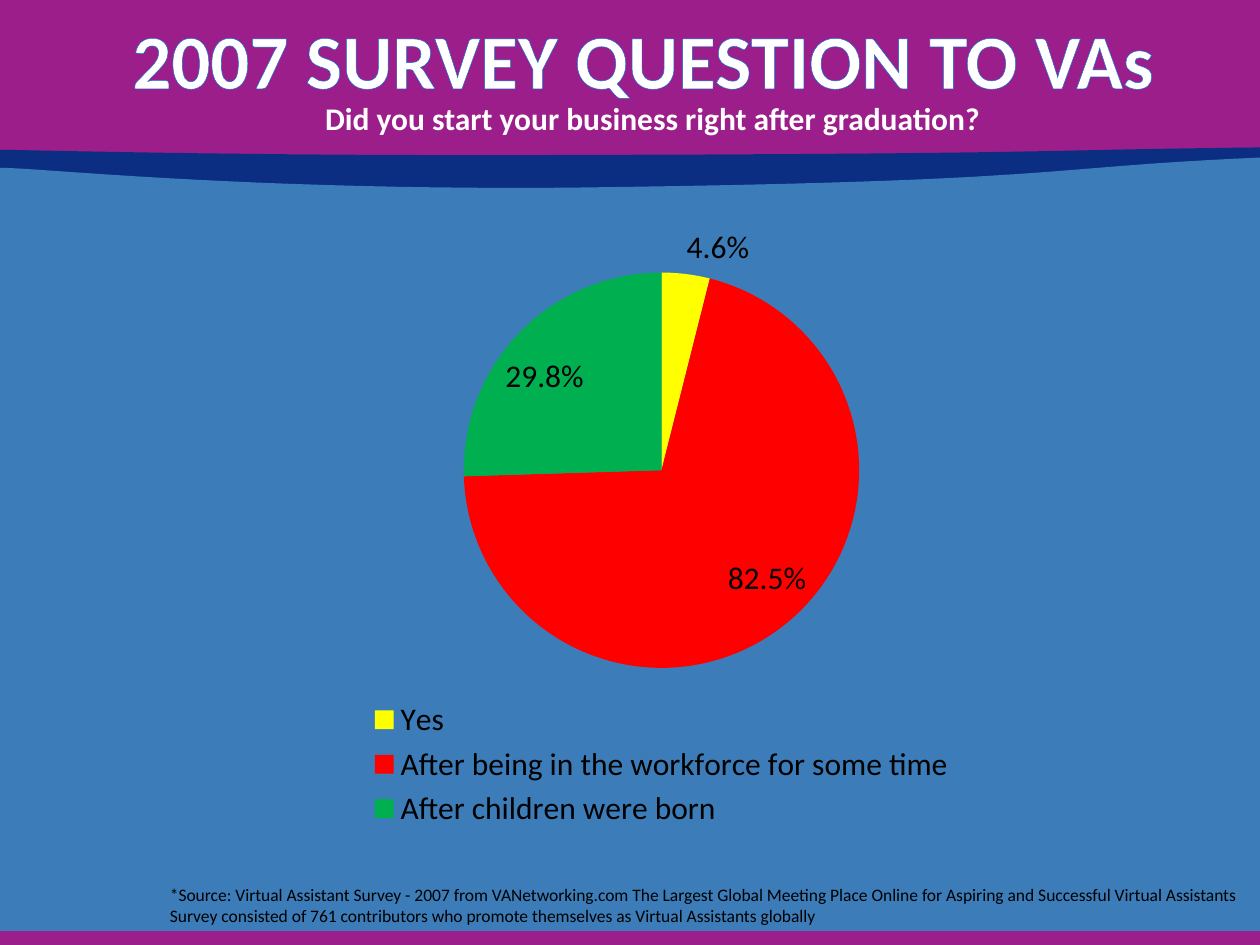
from dataclasses import dataclass, field
from lxml.etree import SubElement
from pptx import Presentation
from pptx.chart.data import CategoryChartData
from pptx.dml.color import RGBColor
from pptx.enum.chart import XL_CHART_TYPE, XL_LABEL_POSITION, XL_LEGEND_POSITION
from pptx.enum.shapes import MSO_SHAPE
from pptx.enum.text import MSO_ANCHOR, PP_ALIGN
from pptx.oxml.ns import qn
from pptx.util import Inches, Pt

WIDTH, HEIGHT = Inches(10), Inches(7.5)
COLS, ROWS = 100, 75
PURPLE, NAVY, BLUE = "9C1E8A", "0B2E82", "3C7DB9"
WHITE, BLACK, EDGE = "FFFFFF", "000000", "0070D5"
LEFT, STEPS = -0.3, 24


@dataclass
class Box:
    x: float
    y: float
    w: float
    h: float

    def place(self) -> tuple[int, ...]:
        return across(self.x), down(self.y), across(self.w), down(self.h)


@dataclass
class Wave:
    start: tuple[float, float]
    curves: list
    base: float
    color: str


@dataclass
class Label:
    box: Box
    lines: list[str]
    color: str
    font: dict
    align: PP_ALIGN = PP_ALIGN.LEFT
    frame: dict = field(default_factory=dict)
    edge: str = ""


def across(cols: float) -> int:
    return round(WIDTH * cols / COLS)


def down(rows: float) -> int:
    return round(HEIGHT * rows / ROWS)


def tint(code: str) -> RGBColor:
    return RGBColor.from_string(code)


def style(item, values: dict) -> None:
    for name, value in values.items():
        setattr(item, name, value)


def paint(shape, color: str) -> None:
    shape.shadow.inherit = False
    shape.fill.solid()
    shape.fill.fore_color.rgb = tint(color)
    shape.line.fill.background()


def draw_band(slide, box: Box, color: str) -> None:
    paint(slide.shapes.add_shape(MSO_SHAPE.RECTANGLE, *box.place()), color)


def trace(wave: Wave) -> list[tuple[int, int]]:
    points, start = [], wave.start
    for a, b, end in wave.curves:
        for step in range(1, STEPS + 1):
            t = step / STEPS
            u = 1 - t
            x, y = (u**3 * p + 3 * u * u * t * q + 3 * u * t * t * r + t**3 * s
                    for p, q, r, s in zip(start, a, b, end))
            points.append((across(x), down(y)))
        start = end
    base = down(wave.base)
    return points + [(across(start[0]), base), (across(wave.start[0]), base)]


def draw_wave(slide, wave: Wave) -> None:
    x, y = wave.start
    pen = slide.shapes.build_freeform(across(x), down(y))
    pen.add_line_segments(trace(wave), close=True)
    paint(pen.convert_to_shape(), wave.color)


def draw_label(slide, label: Label) -> None:
    frame = slide.shapes.add_textbox(*label.box.place()).text_frame
    style(frame, {"word_wrap": True} | label.frame)
    for row, text in enumerate(label.lines):
        para = frame.add_paragraph() if row else frame.paragraphs[0]
        para.alignment = label.align
        run = para.add_run()
        run.text = text
        if label.edge:
            line = SubElement(run.font._element, qn("a:ln"), w=str(Pt(1)))
            fill = SubElement(line, qn("a:solidFill"))
            SubElement(fill, qn("a:srgbClr"), val=label.edge)
        style(run.font, {"name": "Calibri"} | label.font)
        run.font.color.rgb = tint(label.color)


def draw_pie(slide, box: Box, parts: list[tuple[str, float, str]]) -> None:
    names, values, colors = zip(*parts)
    data = CategoryChartData(number_format="0.0%")
    data.categories = names
    data.add_series("Series 1", values)
    chart = slide.shapes.add_chart(XL_CHART_TYPE.PIE, *box.place(), data).chart
    style(chart, {"has_title": False, "has_legend": True})
    style(chart.font, {"name": "Calibri", "size": Pt(18)})
    chart.font.color.rgb = tint(BLACK)
    style(chart.legend, {"position": XL_LEGEND_POSITION.BOTTOM, "include_in_layout": False})
    plot = chart.plots[0]
    style(plot, {"vary_by_categories": True, "has_data_labels": True})
    style(plot.data_labels, {
        "show_value": True, "show_percentage": False, "number_format": "0.0%",
        "number_format_is_linked": False, "position": XL_LABEL_POSITION.BEST_FIT})
    for slot, color in enumerate(colors):
        fill = plot.series[0].points[slot].format.fill
        fill.solid()
        fill.fore_color.rgb = tint(color)


WAVES = [
    Wave((LEFT, 11.9), [((LEFT, 11.8), (16.1, 12.4), (44.8, 12.3)),
                        ((85.2, 12.2), (81.6, 11.9), (100, 11.7))], 29.2, NAVY),
    Wave((LEFT, 13.4), [((LEFT, 12.9), (16.1, 15.1), (44.9, 14.9)),
                        ((85.3, 14.4), (81.7, 13.3), (100.1, 12.5))], ROWS, BLUE),
]
PARTS = [
    ("Yes", 0.046, "FFFF00"),
    ("After being in the workforce for some time", 0.825, "FF0000"),
    ("After children were born", 0.298, "00B050"),
]
LABELS = [
    Label(Box(12.5, 69.7, 87.5, 4.4), [
        "*Source: Virtual Assistant Survey - 2007 from VANetworking.com The Largest Global "
        "Meeting Place Online for Aspiring and Successful Virtual Assistants",
        "Survey consisted of 761 contributors who promote themselves as Virtual Assistants globally",
    ], BLACK, {"size": Pt(10)}),
    Label(Box(17.2, 7.4, 69.2, 4), ["Did you start your business right after graduation?"],
          WHITE, {"size": Pt(18), "bold": True}, PP_ALIGN.CENTER),
    Label(Box(6.1, 0, 90, 9.2), ["2007 SURVEY QUESTION TO VAs"], WHITE,
          {"size": Pt(44), "bold": True}, PP_ALIGN.CENTER,
          {"vertical_anchor": MSO_ANCHOR.MIDDLE}, EDGE),
]


def main() -> None:
    deck = Presentation()
    style(deck, {"slide_width": WIDTH, "slide_height": HEIGHT})
    slide = deck.slides.add_slide(deck.slide_layouts[6])
    draw_band(slide, Box(LEFT, 0, 100.4, 17.5), PURPLE)
    for wave in WAVES:
        draw_wave(slide, wave)
    draw_band(slide, Box(LEFT, 73.9, 100.4, 1.7), PURPLE)
    draw_pie(slide, Box(7.5, 16.7, 90, 49.5), PARTS)
    for label in LABELS:
        draw_label(slide, label)
    deck.save("out.pptx")


if __name__ == "__main__":
    main()
